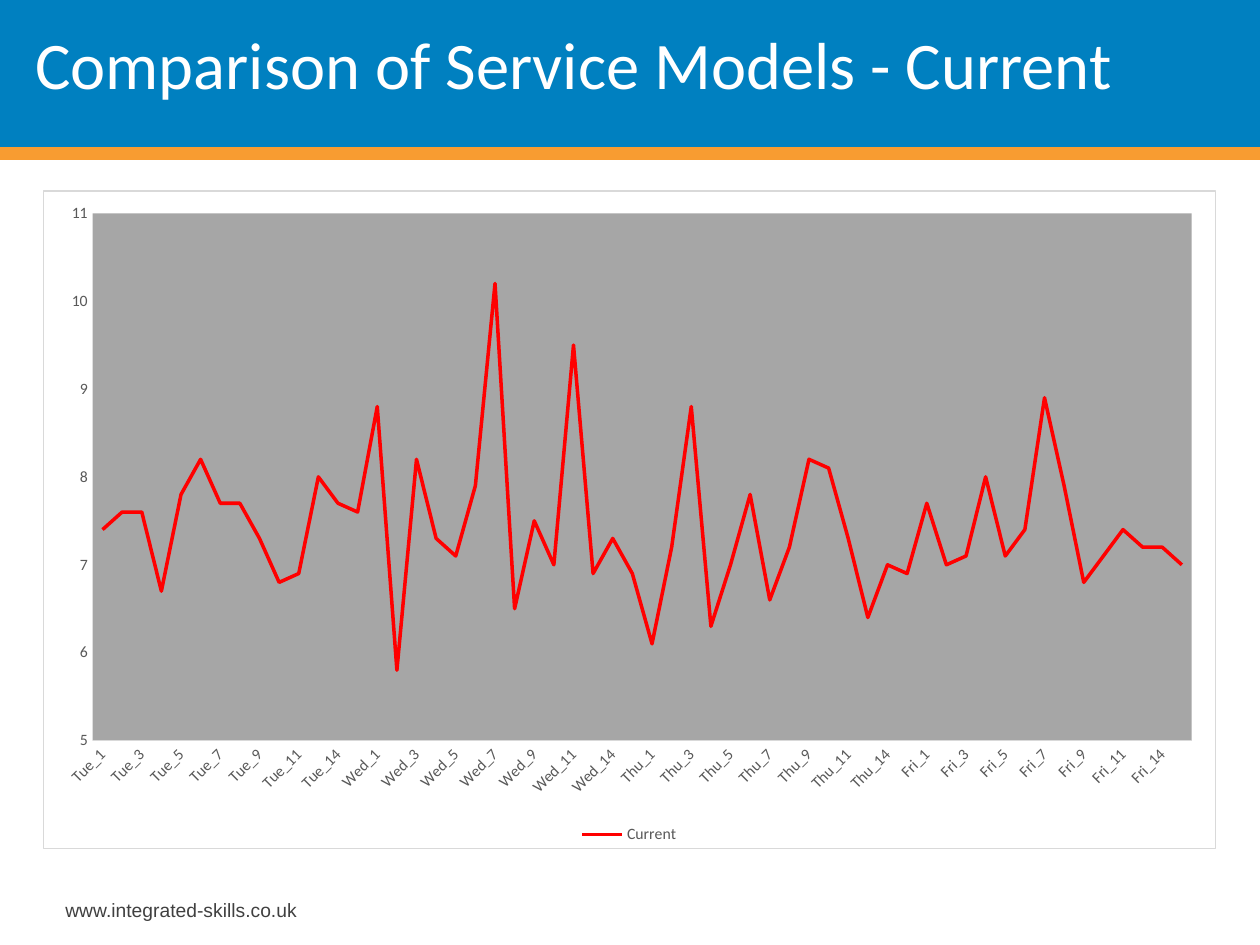
from lxml import etree
from pptx import Presentation
from pptx.chart.data import CategoryChartData
from pptx.dml.color import RGBColor
from pptx.enum.chart import XL_CHART_TYPE, XL_LEGEND_POSITION, XL_TICK_MARK
from pptx.enum.shapes import MSO_CONNECTOR, MSO_SHAPE
from pptx.enum.text import MSO_ANCHOR, PP_ALIGN
from pptx.oxml import parse_xml
from pptx.oxml.ns import nsdecls, qn
from pptx.util import Inches, Pt

LINE_CHART = XL_CHART_TYPE.LINE
LEGEND_BOTTOM = XL_LEGEND_POSITION.BOTTOM
NO_TICK = XL_TICK_MARK.NONE
STRAIGHT = MSO_CONNECTOR.STRAIGHT
RECTANGLE = MSO_SHAPE.RECTANGLE
MIDDLE = MSO_ANCHOR.MIDDLE
LEFT = PP_ALIGN.LEFT

COLORS = {
    "white": "FFFFFF", "blue": "0080C0", "orange": "F89C31", "red": "FF0000",
    "plot": "A6A6A6", "border": "D9D9D9", "label": "595959",
    "footer": "404040", "black": "000000",
}

DAYS = ["Tue", "Wed", "Thu", "Fri"]
PERIODS = [*range(1, 13), 14, 15]
CURRENT = [
    7.4, 7.6, 7.6, 6.7, 7.8, 8.2, 7.7, 7.7, 7.3, 6.8, 6.9, 8, 7.7, 7.6,
    8.8, 5.8, 8.2, 7.3, 7.1, 7.9, 10.2, 6.5, 7.5, 7, 9.5, 6.9, 7.3, 6.9,
    6.1, 7.2, 8.8, 6.3, 7, 7.8, 6.6, 7.2, 8.2, 8.1, 7.3, 6.4, 7, 6.9,
    7.7, 7, 7.1, 8, 7.1, 7.4, 8.9, 7.9, 6.8, 7.1, 7.4, 7.2, 7.2, 7,
]
PLOT_LAYOUT = {"x": 0.042, "y": 0.034, "w": 0.938, "h": 0.802}


def rgb(name):
    return RGBColor.from_string(COLORS[name])


class SlideBuilder:
    def __init__(self, slide):
        self.slide = slide
        self.shapes = slide.shapes

    def style_font(self, font, size, color, name="Calibri"):
        font.size = Pt(size)
        font.name = name
        font.color.rgb = rgb(color)

    def band(self, left, top, width, height, color):
        shape = self.shapes.add_shape(
            RECTANGLE, Inches(left), Inches(top), Inches(width), Inches(height))
        shape.shadow.inherit = False
        shape.fill.solid()
        shape.fill.fore_color.rgb = rgb(color)
        shape.line.fill.background()

    def rule(self, top, width, color, weight):
        connector = self.shapes.add_connector(
            STRAIGHT, 0, Inches(top), Inches(width), Inches(top))
        connector.line.color.rgb = rgb(color)
        connector.line.width = Pt(weight)
        etree.SubElement(connector._element.spPr, qn("a:effectLst"))

    def title(self, text, left, top, width, height):
        title = self.shapes.title
        title.left, title.top = Inches(left), Inches(top)
        title.width, title.height = Inches(width), Inches(height)
        title.text_frame.text = text
        title.text_frame.vertical_anchor = MIDDLE
        paragraph = title.text_frame.paragraphs[0]
        paragraph.alignment = LEFT
        self.style_font(paragraph.runs[0].font, 38, "white")
        self.shapes._spTree.append(title._element)

    def text(self, text, left, top, width, height):
        box = self.shapes.add_textbox(
            Inches(left), Inches(top), Inches(width), Inches(height))
        box.text_frame.word_wrap = True
        box.text_frame.text = text
        run = box.text_frame.paragraphs[0].runs[0]
        self.style_font(run.font, 11, "footer", "Arial")

    def area_format(self, fill, border=None):
        outline = "<a:ln><a:noFill/></a:ln>"
        if border:
            outline = (f'<a:ln w="{Pt(0.75)}"><a:solidFill><a:srgbClr '
                       f'val="{COLORS[border]}"/></a:solidFill></a:ln>')
        return parse_xml(
            f'<c:spPr {nsdecls("c", "a")}><a:solidFill><a:srgbClr '
            f'val="{COLORS[fill]}"/></a:solidFill>{outline}</c:spPr>')

    def format_areas(self, chart):
        chart_space = chart._chartSpace
        chart_space.find(qn("c:chart")).addnext(
            self.area_format("white", "border"))
        plot_area = chart_space.find(".//" + qn("c:plotArea"))
        for layout in plot_area.findall(qn("c:layout")):
            plot_area.remove(layout)
        sizes = "".join(
            f'<c:{key} val="{value}"/>' for key, value in PLOT_LAYOUT.items())
        plot_area.insert(0, parse_xml(
            f'<c:layout {nsdecls("c")}><c:manualLayout>'
            '<c:layoutTarget val="inner"/><c:xMode val="edge"/>'
            f'<c:yMode val="edge"/>{sizes}</c:manualLayout></c:layout>'))
        plot_area.append(self.area_format("plot"))

    def line_chart(self, name, categories, values, left, top, width, height):
        data = CategoryChartData()
        data.categories = categories
        data.add_series(name, values)
        chart = self.shapes.add_chart(
            LINE_CHART, Inches(left), Inches(top), Inches(width),
            Inches(height), data).chart
        chart.has_title = False
        self.style_font(chart.font, 10, "black")

        chart.has_legend = True
        chart.legend.position = LEGEND_BOTTOM
        chart.legend.include_in_layout = False
        self.style_font(chart.legend.font, 9, "label")

        for axis in (chart.category_axis, chart.value_axis):
            axis.has_major_gridlines = False
            axis.major_tick_mark = NO_TICK
            axis.minor_tick_mark = NO_TICK
            self.style_font(axis.tick_labels.font, 9, "label")
        category_axis, value_axis = chart.category_axis, chart.value_axis
        category_axis.format.line.color.rgb = rgb("border")
        category_axis.format.line.width = Pt(0.75)
        label_body = category_axis._element.find(
            qn("c:txPr")).find(qn("a:bodyPr"))
        label_body.set("rot", "-2700000")
        label_body.set("vert", "horz")
        value_axis.format.line.fill.background()
        value_axis.minimum_scale = 5
        value_axis.maximum_scale = 11
        value_axis.major_unit = 1
        value_axis.tick_labels.number_format = "0"
        value_axis.tick_labels.number_format_is_linked = False

        plot = chart.plots[0]
        plot.vary_by_categories = False
        series = plot.series[0]
        series.smooth = False
        series.format.line.color.rgb = rgb("red")
        series.format.line.width = Pt(2)
        self.format_areas(chart)


def main():
    presentation = Presentation()
    presentation.slide_width = Inches(10)
    presentation.slide_height = Inches(7.5)
    slide = presentation.slides.add_slide(presentation.slide_layouts[5])
    builder = SlideBuilder(slide)
    builder.text("www.integrated-skills.co.uk", 0.42, 7.08, 2.06, 0.29)
    builder.band(0, 0, 10, 1.25, "blue")
    builder.rule(1.22, 10, "orange", 7.75)
    categories = [f"{day}_{period}" for day in DAYS for period in PERIODS]
    builder.line_chart("Current", categories, CURRENT, 0.34, 1.51, 9.31, 5.23)
    builder.title("Comparison of Service Models - Current", 0.18, 0, 9.63, 1)
    presentation.save("out.pptx")


if __name__ == "__main__":
    main()
